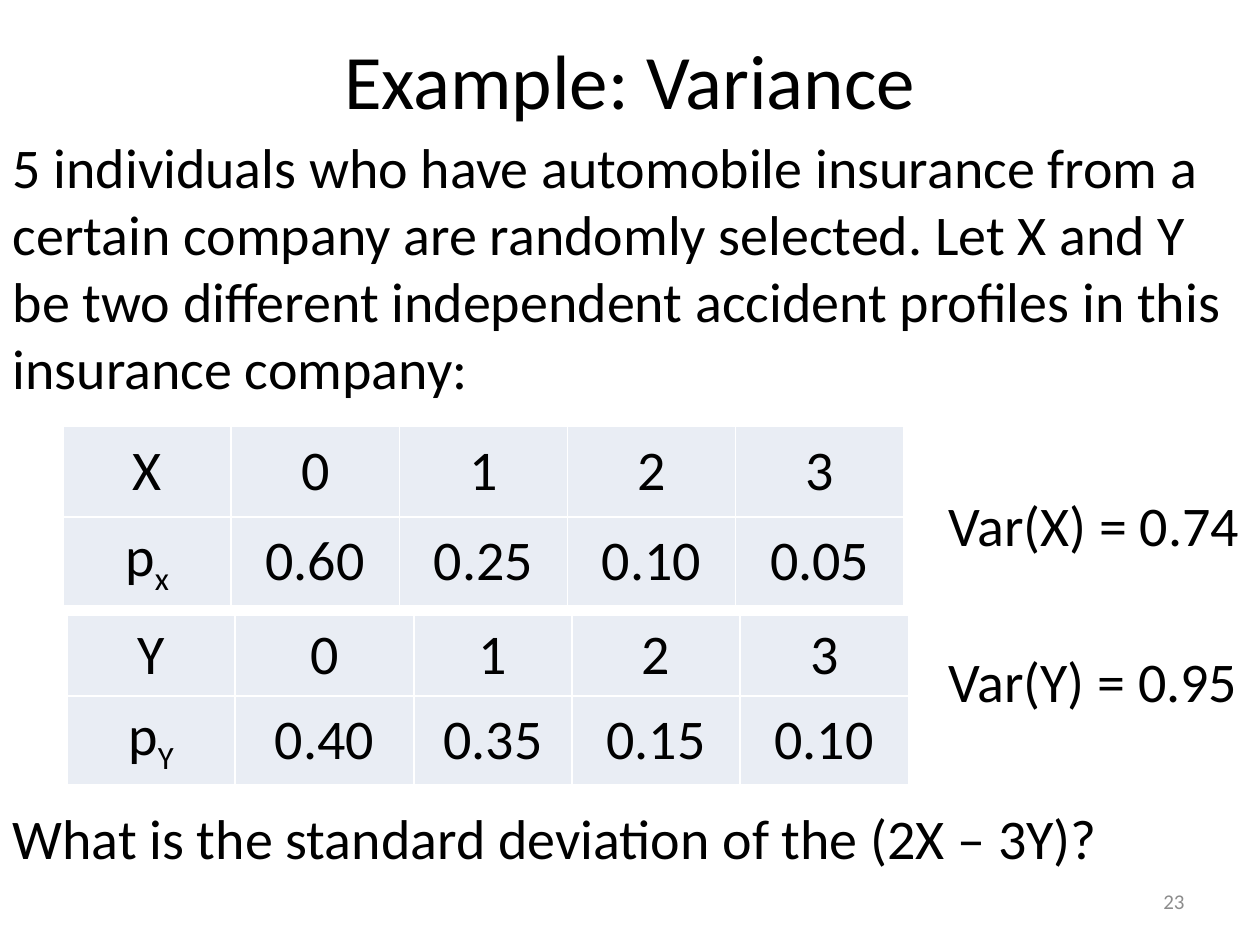
"""Build a slide with a variance exercise on two accident distributions."""
from dataclasses import dataclass

from lxml import etree
from pptx import Presentation
from pptx.dml.color import RGBColor
from pptx.enum.text import MSO_ANCHOR, MSO_AUTO_SIZE, PP_ALIGN
from pptx.oxml.ns import qn
from pptx.util import Cm, Pt

MIDDLE, TOP = MSO_ANCHOR.MIDDLE, MSO_ANCHOR.TOP
LEFT, CENTER, RIGHT = PP_ALIGN.LEFT, PP_ALIGN.CENTER, PP_ALIGN.RIGHT
NO_AUTOFIT = MSO_AUTO_SIZE.NONE
BLACK = RGBColor(0x00, 0x00, 0x00)
GRAY = RGBColor(0x8C, 0x8C, 0x8C)
WHITE = RGBColor(0xFF, 0xFF, 0xFF)
CELL_FILL = RGBColor(0xE9, 0xED, 0xF4)
FONT = "Calibri"
BODY_SIZE = 32


@dataclass(frozen=True)
class Statement:
    text: str
    indent: float = 0
    space_before: float = 51


@dataclass(frozen=True)
class Distribution:
    variable: str
    subscript: str
    probabilities: tuple[str, ...]
    left: float
    top: float
    widths: tuple[float, ...]
    heights: tuple[float, float]


STATEMENTS = (
    Statement(
        "5 individuals who have automobile insurance from a certain company are "
        "randomly selected. Let X and Y be two different independent accident "
        "profiles in this insurance company:",
        space_before=0,
    ),
    Statement("Var(X) = 0.74", indent=18.87),
    Statement("Var(Y) = 0.95", indent=18.87),
    Statement("What is the standard deviation of the (2X – 3Y)?"),
)
DISTRIBUTIONS = (
    Distribution("X", "x", ("0.60", "0.25", "0.10", "0.05"), 1.27, 8.59,
                 (3.39,) * 5, (1.83, 1.78)),
    Distribution("Y", "Y", ("0.40", "0.35", "0.15", "0.10"), 1.35, 12.4,
                 (3.39, 3.61, 3.18, 3.39, 3.39), (1.63, 1.78)),
)


def place(shape, left: float, top: float, width: float, height: float) -> None:
    shape.left, shape.top = Cm(left), Cm(top)
    shape.width, shape.height = Cm(width), Cm(height)


def add_run(paragraph, text: str, size: float = BODY_SIZE,
            color: RGBColor = BLACK, align=CENTER):
    paragraph.alignment = align
    run = paragraph.add_run()
    run.text = text
    run.font.name, run.font.size = FONT, Pt(size)
    run.font.color.rgb = color
    return run


def add_statements(text_frame, statements: tuple[Statement, ...]) -> None:
    text_frame.auto_size = NO_AUTOFIT
    text_frame.vertical_anchor = TOP
    for index, statement in enumerate(statements):
        paragraph = text_frame.add_paragraph() if index else text_frame.paragraphs[0]
        add_run(paragraph, statement.text, align=LEFT)
        paragraph.space_before = Pt(statement.space_before)
        properties = paragraph._p.get_or_add_pPr()
        properties.set("marL", str(Cm(statement.indent)))
        properties.set("indent", "0")
        etree.SubElement(properties, qn("a:buNone"))


def format_cell(cell) -> None:
    cell.vertical_anchor = MIDDLE
    properties = cell._tc.get_or_add_tcPr()
    for side in ("lnL", "lnR", "lnT", "lnB"):
        line = etree.SubElement(properties, qn(f"a:{side}"), w=str(Pt(1)))
        fill = etree.SubElement(line, qn("a:solidFill"))
        etree.SubElement(fill, qn("a:srgbClr"), val=str(WHITE))
    cell.fill.solid()
    cell.fill.fore_color.rgb = CELL_FILL


def add_distribution(slide, distribution: Distribution) -> None:
    rows = (
        (distribution.variable, "0", "1", "2", "3"),
        ("p", *distribution.probabilities),
    )
    table = slide.shapes.add_table(
        len(rows), len(rows[0]), Cm(distribution.left), Cm(distribution.top),
        Cm(sum(distribution.widths)), Cm(sum(distribution.heights)),
    ).table
    table.first_row = table.horz_banding = False
    for column, width in zip(table.columns, distribution.widths):
        column.width = Cm(width)
    for row, height, texts in zip(table.rows, distribution.heights, rows):
        row.height = Cm(height)
        for cell, text in zip(row.cells, texts):
            format_cell(cell)
            add_run(cell.text_frame.paragraphs[0], text)
    label = table.cell(1, 0).text_frame.paragraphs[0]
    subscript = add_run(label, distribution.subscript)
    subscript.font._element.set("baseline", "-25000")


def main() -> None:
    presentation = Presentation()
    presentation.slide_width, presentation.slide_height = Cm(25.4), Cm(19.05)
    slide = presentation.slides.add_slide(presentation.slide_layouts[1])

    title, body = slide.placeholders
    place(title, 1.27, 0, 22.86, 3.18)
    title.text_frame.vertical_anchor = MIDDLE
    add_run(title.text_frame.paragraphs[0], "Example: Variance", 44)

    place(body, 0, 2.54, 25.4, 16.51)
    add_statements(body.text_frame, STATEMENTS)

    for distribution in DISTRIBUTIONS:
        add_distribution(slide, distribution)

    page_number = slide.shapes.add_textbox(Cm(18.2), Cm(17.66), Cm(5.93), Cm(1.01))
    page_number.text_frame.word_wrap = True
    page_number.text_frame.vertical_anchor = MIDDLE
    add_run(page_number.text_frame.paragraphs[0], "23", 12, GRAY, RIGHT)

    presentation.save("out.pptx")


if __name__ == "__main__":
    main()
